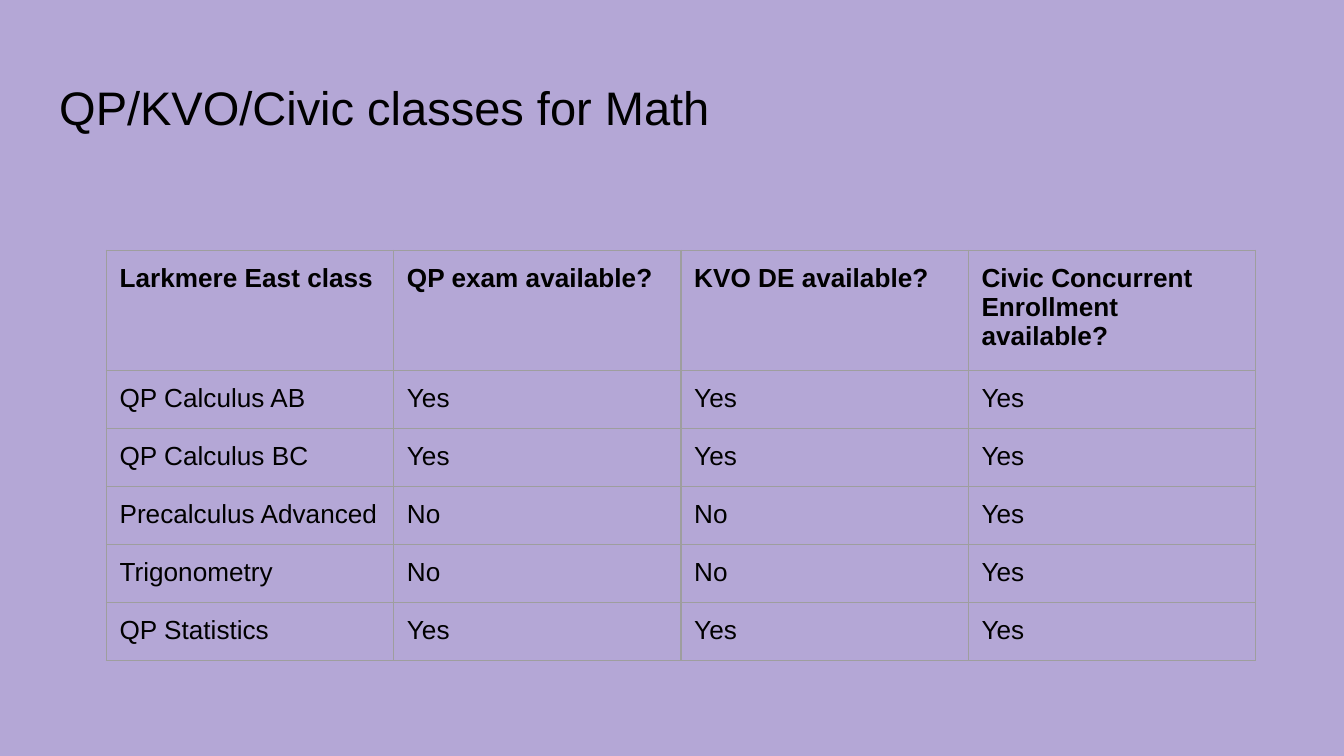
"""Build a slide listing which math classes offer college credit."""
from dataclasses import dataclass

from lxml.etree import SubElement
from pptx import Presentation
from pptx.dml.color import RGBColor
from pptx.enum.text import MSO_ANCHOR
from pptx.oxml.ns import qn
from pptx.util import Cm, Pt

FONT = "Arial"
BLACK = "000000"
LAVENDER = "B4A7D6"
GREY = "9E9E9E"
INSET = Cm(0.25)
COLUMN_WIDTH = Cm(5.43)
ROW_HEIGHT = Cm(1.06)
HEADINGS = (
    "Larkmere East class",
    "QP exam available?",
    "KVO DE available?",
    "Civic Concurrent Enrollment available?",
)


@dataclass(frozen=True)
class MathClass:
    name: str
    exam: str
    university: str
    college: str = "Yes"

    def texts(self) -> tuple[str, ...]:
        return self.name, self.exam, self.university, self.college


CLASSES = (
    MathClass("QP Calculus AB", "Yes", "Yes"),
    MathClass("QP Calculus BC", "Yes", "Yes"),
    MathClass("Precalculus Advanced", "No", "No"),
    MathClass("Trigonometry", "No", "No"),
    MathClass("QP Statistics", "Yes", "Yes"),
)


def paint(color, value: str) -> None:
    color.rgb = RGBColor.from_string(value)


def write(frame, text: str, size: float, bold: bool = False) -> None:
    frame.word_wrap = True
    para = frame.paragraphs[0]
    para.text = text
    para.font.name = FONT
    para.font.size = Pt(size)
    para.font.bold = bold
    paint(para.font.color, BLACK)


def set_margins(target) -> None:
    target.margin_left = target.margin_right = INSET
    target.margin_top = target.margin_bottom = INSET
    target.vertical_anchor = MSO_ANCHOR.TOP


def add_borders(cell) -> None:
    properties = cell._tc.get_or_add_tcPr()
    for side in ("lnL", "lnR", "lnT", "lnB"):
        line = SubElement(properties, qn(f"a:{side}"), w=str(Pt(0.75)))
        fill = SubElement(line, qn("a:solidFill"))
        SubElement(fill, qn("a:srgbClr"), val=GREY)


def add_title(page, text: str) -> None:
    box = page.shapes.add_textbox(Cm(0.87), Cm(1.24), Cm(23.67), Cm(1.6))
    set_margins(box.text_frame)
    write(box.text_frame, text, 25.2)


def add_class_table(page, classes: tuple[MathClass, ...]) -> None:
    rows = [HEADINGS, *(item.texts() for item in classes)]
    width = COLUMN_WIDTH * len(HEADINGS)
    height = ROW_HEIGHT * len(rows)
    table = page.shapes.add_table(
        len(rows), len(HEADINGS), Cm(2.01), Cm(4.73), width, height
    ).table
    table.first_row = table.horz_banding = False
    for row_index, texts in enumerate(rows):
        for column_index, text in enumerate(texts):
            cell = table.cell(row_index, column_index)
            set_margins(cell)
            add_borders(cell)
            cell.fill.background()
            write(cell.text_frame, text, 14, bold=row_index == 0)


def main() -> None:
    deck = Presentation()
    deck.slide_width, deck.slide_height = Cm(25.4), Cm(14.29)
    page = deck.slides.add_slide(deck.slide_layouts[6])
    page.background.fill.solid()
    paint(page.background.fill.fore_color, LAVENDER)
    add_title(page, "QP/KVO/Civic classes for Math")
    add_class_table(page, CLASSES)
    deck.save("out.pptx")


if __name__ == "__main__":
    main()
